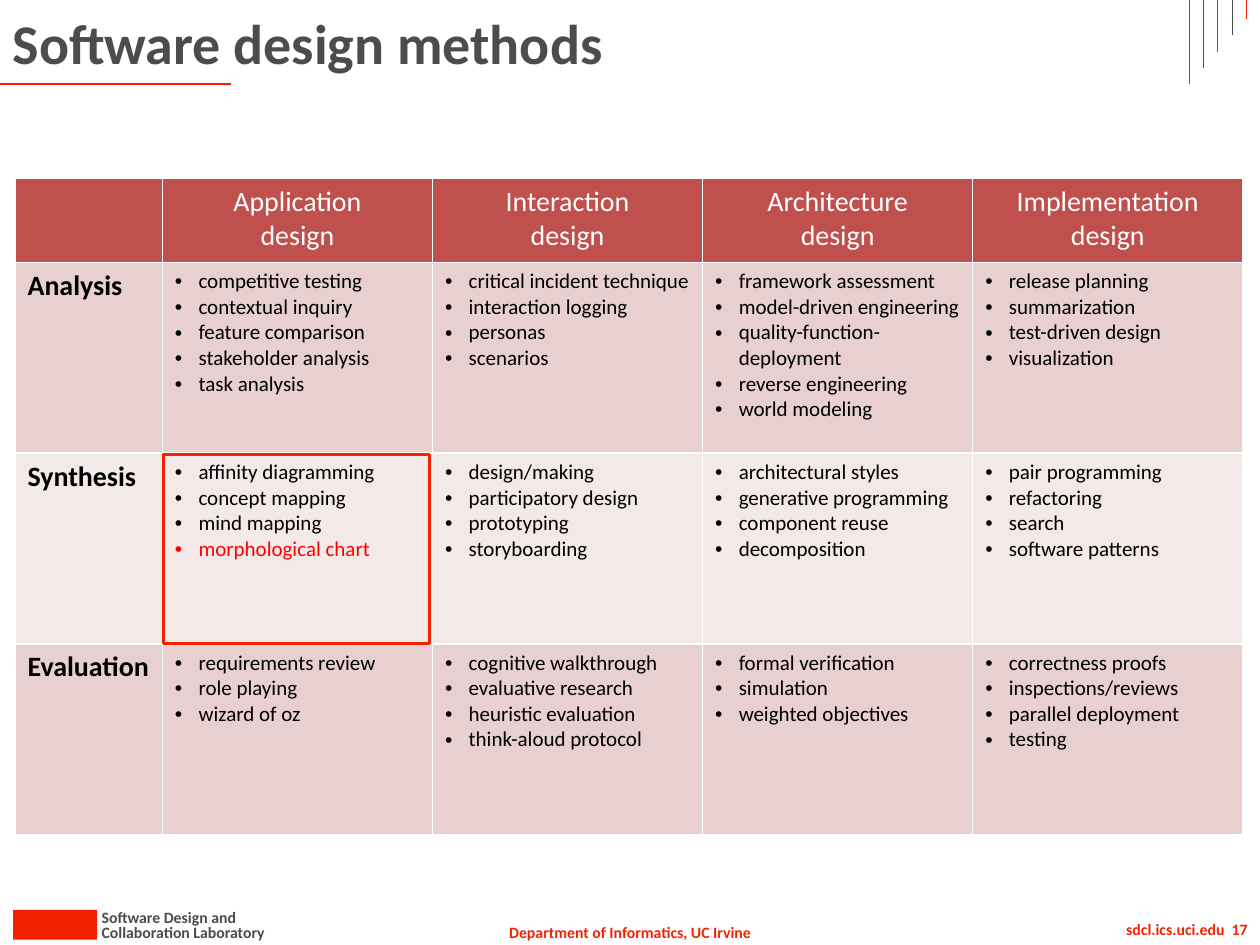
from copy import deepcopy
from lxml.etree import SubElement
from pptx import Presentation
from pptx.dml.color import RGBColor
from pptx.enum.shapes import MSO_CONNECTOR as CONNECTOR, MSO_SHAPE as SHAPE
from pptx.enum.text import MSO_ANCHOR as ANCHOR, MSO_AUTO_SIZE as AUTOSIZE, PP_ALIGN as ALIGN
from pptx.oxml.ns import qn
from pptx.util import Pt

RED = RGBColor(0xF3, 0x22, 0x00)
GRAY = RGBColor(0x4C, 0x4C, 0x4C)
WHITE = RGBColor(0xFF, 0xFF, 0xFF)
BLACK = RGBColor(0x00, 0x00, 0x00)
ACCENT = RGBColor(0xFF, 0x00, 0x00)
HEADER_FILL = RGBColor(0xC0, 0x50, 0x4D)
DARK_BAND = RGBColor(0xE8, 0xD0, 0xD0)
LIGHT_BAND = RGBColor(0xF4, 0xE9, 0xE9)


def write(paragraph, text, size, color, bold, align=ALIGN.LEFT):
    paragraph.text = text
    paragraph.alignment = align
    look = {"name": "Calibri", "size": Pt(size), "bold": bold}
    for run in paragraph.runs:
        for attribute, value in look.items():
            setattr(run.font, attribute, value)
        run.font.color.rgb = color
    for line_break in paragraph._p.findall(qn("a:br")):
        line_break.append(deepcopy(paragraph.runs[0]._r.rPr))


def draw_line(x1, y1, x2, y2, color, width):
    line = slide.shapes.add_connector(CONNECTOR.STRAIGHT, Pt(x1), Pt(y1), Pt(x2), Pt(y2))
    line.line.color.rgb = color
    line.line.width = Pt(width)
    SubElement(line._element.spPr, qn("a:effectLst"))


prs = Presentation()
prs.slide_width, prs.slide_height = Pt(720), Pt(540)
slide = prs.slides.add_slide(prs.slide_layouts[5])

title = slide.shapes.title
title.left, title.top, title.width, title.height = Pt(0), Pt(0), Pt(648), Pt(48)
title.text_frame.vertical_anchor = ANCHOR.MIDDLE
write(title.text_frame.paragraphs[0], "Software design methods", 32, GRAY, True)

footers = [
    ("Department of Informatics, UC Irvine", 282.5, 523.5, 155, 18, RED, ALIGN.CENTER, False),
    ("Collaboration Laboratory", 51, 523.5, 110, 18, GRAY, ALIGN.LEFT, False),
    ("Software Design and", 51, 515, 93, 18, GRAY, ALIGN.LEFT, False),
    ("sdcl.ics.uci.edu  17", 564.5, 522, 155.5, 18, RED, ALIGN.RIGHT, True),
]
for text, left, top, width, height, color, align, wrap in footers:
    frame = slide.shapes.add_textbox(Pt(left), Pt(top), Pt(width), Pt(height)).text_frame
    frame.word_wrap = wrap
    frame.auto_size = AUTOSIZE.SHAPE_TO_FIT_TEXT
    write(frame.paragraphs[0], text, 9, color, True, align)

footer_block = slide.shapes.add_shape(SHAPE.RECTANGLE, Pt(7.5), Pt(520), Pt(48), Pt(17))
footer_block.shadow.inherit = False
footer_block.fill.solid()
footer_block.fill.fore_color.rgb = RED
footer_block.line.fill.background()

draw_line(0, 48, 132, 48, RED, 1.5)
for i in range(5):
    x = 679.7 + 8.1 * i
    draw_line(x, 48.2 - 9.35 * i, x, 0, GRAY if i % 2 else RED, 0.5)

headers = ["", "Application\ndesign", "Interaction\ndesign",
           "Architecture\ndesign", "Implementation\ndesign"]
phases = [
    ("Analysis", DARK_BAND, [
        ["competitive testing", "contextual inquiry", "feature comparison",
         "stakeholder analysis", "task analysis"],
        ["critical incident technique", "interaction logging", "personas", "scenarios"],
        ["framework assessment", "model-driven engineering", "quality-function-deployment",
         "reverse engineering", "world modeling"],
        ["release planning", "summarization", "test-driven design", "visualization"],
    ]),
    ("Synthesis", LIGHT_BAND, [
        ["affinity diagramming", "concept mapping", "mind mapping", "morphological chart"],
        ["design/making", "participatory design", "prototyping", "storyboarding"],
        ["architectural styles", "generative programming", "component reuse", "decomposition"],
        ["pair programming", "refactoring", "search", "software patterns"],
    ]),
    ("Evaluation", DARK_BAND, [
        ["requirements review", "role playing", "wizard of oz"],
        ["cognitive walkthrough", "evaluative research", "heuristic evaluation",
         "think-aloud protocol"],
        ["formal verification", "simulation", "weighted objectives"],
        ["correctness proofs", "inspections/reviews", "parallel deployment", "testing"],
    ]),
]

methods = slide.shapes.add_table(4, 5, Pt(8.6), Pt(102), Pt(701.6), Pt(375)).table
for column, width in zip(methods.columns, [84.2] + [154.35] * 4):
    column.width = Pt(width)
for row, height in zip(methods.rows, [48] + [109] * 3):
    row.height = Pt(height)

fills = [HEADER_FILL] + [band for _, band, _ in phases]
for r, fill in enumerate(fills):
    for cell in methods.rows[r].cells:
        properties = cell._tc.get_or_add_tcPr()
        for side in "LRTB":
            border = SubElement(properties, qn(f"a:ln{side}"), w=str(Pt(1)))
            SubElement(SubElement(border, qn("a:solidFill")), qn("a:srgbClr"), val=str(WHITE))
        cell.fill.solid()
        cell.fill.fore_color.rgb = fill

for c, header in enumerate(headers):
    write(methods.cell(0, c).text_frame.paragraphs[0], header, 16, WHITE, False, ALIGN.CENTER)

for r, (phase, _, groups) in enumerate(phases, 1):
    write(methods.cell(r, 0).text_frame.paragraphs[0], phase, 16, BLACK, True)
    for c, group in enumerate(groups, 1):
        frame = methods.cell(r, c).text_frame
        for i, method in enumerate(group):
            paragraph = frame.add_paragraph() if i else frame.paragraphs[0]
            color = ACCENT if method == "morphological chart" else BLACK
            write(paragraph, method, 12, color, False)
            bullet = paragraph._p.get_or_add_pPr()
            bullet.set("marL", str(Pt(13.5)))
            bullet.set("indent", str(-Pt(13.5)))
            SubElement(bullet, qn("a:buFont"), typeface="Arial")
            SubElement(bullet, qn("a:buChar"), char="•")

highlight = slide.shapes.add_shape(SHAPE.RECTANGLE, Pt(93.5), Pt(259.75), Pt(152), Pt(108))
highlight.shadow.inherit = False
highlight.fill.background()
highlight.line.color.rgb = RED
highlight.line.width = Pt(2)

prs.save("out.pptx")
